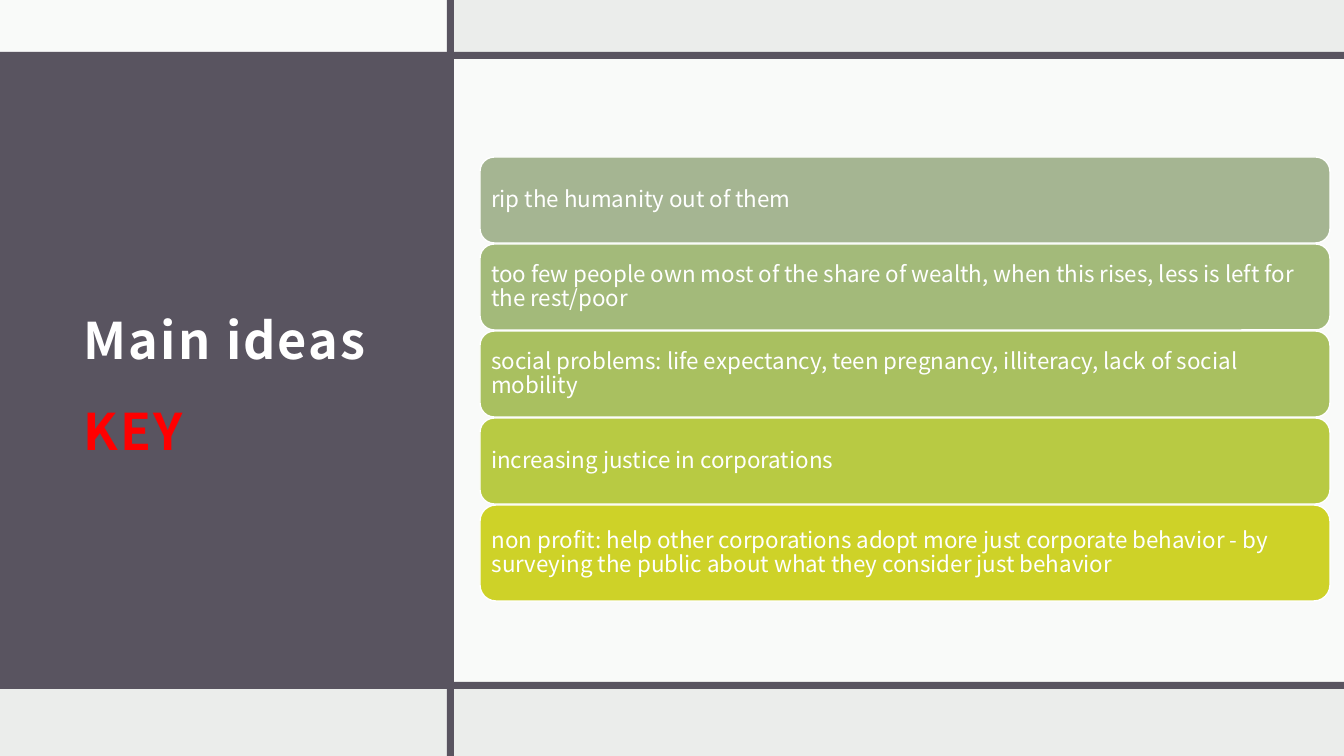
"""Build the "Main ideas" slide: a dark title panel beside five stacked idea boxes."""
from lxml import etree
from pptx import Presentation
from pptx.dml.color import RGBColor
from pptx.enum.shapes import MSO_SHAPE
from pptx.enum.text import MSO_ANCHOR, MSO_AUTO_SIZE, PP_ALIGN
from pptx.oxml.ns import qn
from pptx.util import Pt

RECT, ROUND = MSO_SHAPE.RECTANGLE, MSO_SHAPE.ROUNDED_RECTANGLE
MIDDLE, LEFT, NOFIT = MSO_ANCHOR.MIDDLE, PP_ALIGN.LEFT, MSO_AUTO_SIZE.NONE
FONT = "Noto Sans CJK JP"
WHITE, DARK, PALE, RED = "FFFFFF", "595460", "EBEDEB", "FF0000"
WIDE, HIGH = 1344, 756

TITLE = [("Main ideas ", WHITE), ("KEY", RED)]
IDEAS = [
    ("rip the humanity out of them", "A5B592"),
    ("too few people own most of the share of wealth, when this rises, "
     "less is left for the rest/poor", "A3BA7A"),
    ("social problems: life expectancy, teen pregnancy, illiteracy, "
     "lack of social mobility", "A9C060"),
    ("increasing justice in corporations", "B8CA43"),
    ("non profit: help other corporations adopt more just corporate behavior "
     "- by surveying the public about what they consider just behavior", "CED228"),
]
BAR, SPLIT, UPPER, LOWER = 7, 447, 52, 682
PANES = [
    (0, UPPER, SPLIT, LOWER - UPPER, DARK, 100),
    (0, 0, SPLIT, UPPER, WHITE, 75),
    (SPLIT + BAR, UPPER + BAR, WIDE - SPLIT - BAR, LOWER - UPPER - BAR, WHITE, 75),
    (0, LOWER, WIDE, BAR, DARK, 100),
    (SPLIT, 0, BAR, HIGH, DARK, 100),
    (0, UPPER, WIDE, BAR, DARK, 100),
]
BOX_X, BOX_Y, BOX_W, BOX_H, STEP, EXTRA = 480, 157, 850, 86, 87, 10


def emu(px):
    """Turn px into EMU."""
    return round(px * 914400 / 100.8)


def color(code):
    """Turn a hex string into a colour."""
    return RGBColor.from_string(code)


def block(slide, kind, x, y, w, h, fill, alpha=100, line=None):
    """Add one filled shape."""
    shape = slide.shapes.add_shape(kind, emu(x), emu(y), emu(w), emu(h))
    shape.shadow.inherit = False
    shape.fill.solid()
    shape.fill.fore_color.rgb = color(fill)
    if alpha < 100:
        tint = shape.element.spPr.find(".//" + qn("a:srgbClr"))
        etree.SubElement(tint, qn("a:alpha"), val=str(alpha * 1000))
    if line:
        shape.line.color.rgb = color(line)
        shape.line.width = Pt(1)
    else:
        shape.line.fill.background()
    return shape


def write(shape, runs, size, inset, lead, bold=False, gap=0):
    """Fill a shape with one paragraph of coloured runs."""
    frame = shape.text_frame
    frame.word_wrap = True
    frame.auto_size = NOFIT
    frame.vertical_anchor = MIDDLE
    frame.margin_left = frame.margin_right = emu(inset)
    frame.margin_top = frame.margin_bottom = emu(inset)
    para = frame.paragraphs[0]
    para.alignment = LEFT
    para.line_spacing = lead
    para.space_before = Pt(0)
    for text, shade in runs:
        run = para.add_run()
        run.text = text
        font = run.font
        font.name, font.size, font.bold = FONT, Pt(size), bold
        font.color.rgb = color(shade)
        if gap:
            run.font._element.set("spc", str(gap))


def main():
    """Draw the slide and save it."""
    deck = Presentation()
    deck.slide_width, deck.slide_height = emu(WIDE), emu(HIGH)
    slide = deck.slides.add_slide(deck.slide_layouts[5])
    back = slide.background.fill
    back.solid()
    back.fore_color.rgb = color(PALE)
    for x, y, w, h, fill, alpha in PANES:
        block(slide, RECT, x, y, w, h, fill, alpha)

    title = slide.shapes.title
    title.left, title.top = emu(72), emu(132)
    title.width, title.height = emu(344), emu(475)
    title.element.getparent().append(title.element)
    write(title, TITLE, 36, 12, 1.5, bold=True, gap=150)

    for i, (text, fill) in enumerate(IDEAS):
        high = BOX_H + (EXTRA if i == len(IDEAS) - 1 else 0)
        box = block(slide, ROUND, BOX_X, BOX_Y + i * STEP, BOX_W, high, fill, line=WHITE)
        write(box, [(text, WHITE)], 16, 7, 0.9)
    deck.save("out.pptx")


if __name__ == "__main__":
    main()
